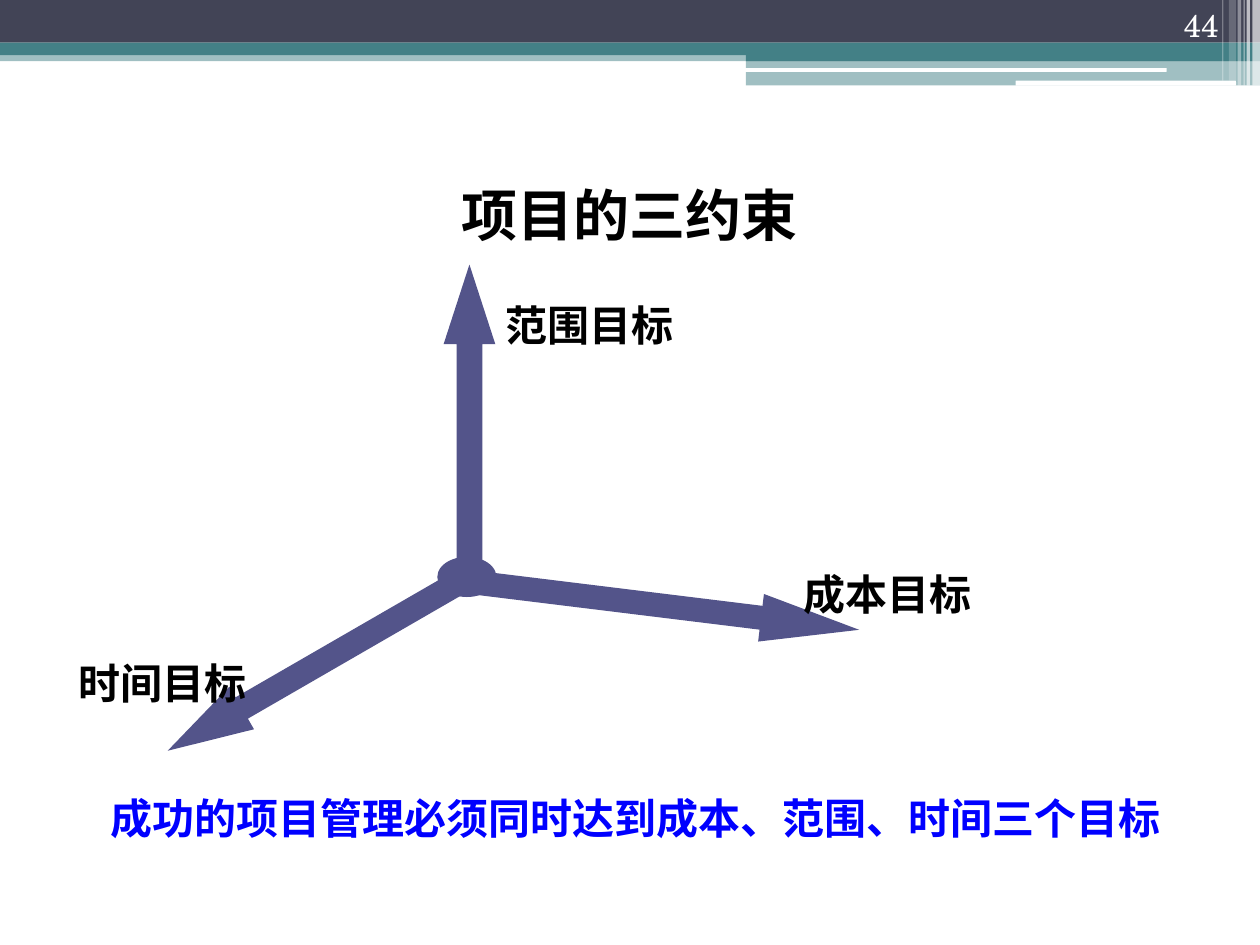
from lxml.etree import SubElement
from pptx import Presentation
from pptx.dml.color import RGBColor
from pptx.enum.shapes import MSO_SHAPE as Preset
from pptx.enum.text import MSO_ANCHOR as Anchor, PP_ALIGN as Align
from pptx.oxml.ns import qn
from pptx.util import Pt

NAVY = RGBColor(0x42, 0x44, 0x56)
TEAL = RGBColor(0x43, 0x80, 0x86)
INDIGO = RGBColor(0x53, 0x54, 0x8A)
WHITE = RGBColor(0xFF, 0xFF, 0xFF)
BLACK = RGBColor(0, 0, 0)
BLUE = RGBColor(0, 0, 0xFF)


def add_solid(shapes, preset, box, color, opacity=100, rotation=0, adjustments=()):
    """Add a borderless filled shape; box is left, top, width, height in points."""
    shape = shapes.add_shape(preset, *map(Pt, box))
    shape.shadow.inherit = False
    shape.line.fill.background()
    shape.fill.solid()
    shape.fill.fore_color.rgb = color
    shape.rotation = rotation
    for index, value in enumerate(adjustments):
        shape.adjustments[index] = value
    if opacity < 100:
        color_element = shape.fill._xPr.find(qn("a:solidFill"))[0]
        SubElement(color_element, qn("a:alpha"), val=str(opacity * 1000))
    return shape


def add_text(shapes, text, box, size=24, font="Arial", color=BLACK, bold=True,
             align=Align.CENTER, anchor=Anchor.TOP, wrap=False, left_inset=7.2):
    text_box = shapes.add_textbox(*map(Pt, box))
    frame = text_box.text_frame
    frame.word_wrap = wrap
    frame.vertical_anchor = anchor
    frame.margin_left = Pt(left_inset)
    paragraph = frame.paragraphs[0]
    paragraph.alignment = align
    run = paragraph.add_run()
    run.text = text
    run.font.size = Pt(size)
    run.font.name = font
    run.font.bold = bold
    run.font.color.rgb = color


def add_header(shapes, box, page_number):
    left, top, width, height = box
    step_left = left + 426.2
    step_width = left + width - step_left

    # Horizontal bands
    bands = [
        (left, 28.8, width, 6.2, TEAL, 50),
        (left, 0, width, 24.4, NAVY, 100),
        (left, 24.4, width, 7.2, TEAL, 100),
        (step_left, 28, step_width, 7, TEAL, 100),
        (step_left, 34.9, step_width, 14, TEAL, 50),
    ]
    for band_left, offset, band_width, band_height, color, opacity in bands:
        add_solid(shapes, Preset.RECTANGLE,
                  (band_left, top + offset, band_width, band_height), color, opacity)

    # White rules
    for offset_x, offset_y, rule_width, rule_height in [
        (425.5, 38.9, 241.2, 2.2), (580.3, 46.1, 126, 2.9),
    ]:
        add_solid(shapes, Preset.ROUNDED_RECTANGLE,
                  (left + offset_x, top + offset_y, rule_width, rule_height),
                  WHITE, adjustments=[0.17])

    # Vertical stripes at the right edge
    for offset, stripe_width, stripe_height, opacity in [
        (715.7, 4.3, height, 65), (712.3, 2, height, 65), (710.6, 0.7, height, 60),
        (707.2, 2, height, 40), (702.2, 4, 46.1, 20), (698.4, 0.7, 46.1, 30),
    ]:
        add_solid(shapes, Preset.RECTANGLE,
                  (left + offset, top, stripe_width, stripe_height), WHITE, opacity)

    # Page number
    add_text(shapes, page_number, (left + 643.7, top, 59.8, 28.8), size=18,
             font="TeX Gyre Schola", color=WHITE, bold=False,
             align=Align.RIGHT, anchor=Anchor.BOTTOM, wrap=True)


def add_constraint_axes(shapes, left, top):
    group = shapes.add_group_shape().shapes

    # Arrows for cost, scope and time
    for preset, x, y, width, height, rotation, head in [
        (Preset.RIGHT_ARROW, 236.9, 181.4, 223.2, 27.4, 7, 2.06),
        (Preset.UP_ARROW, 221.8, 0, 29.5, 182.9, 0, 1.54),
        (Preset.UP_ARROW, 133.9, 132.5, 28.1, 193.7, 240, 1.74),
    ]:
        add_solid(group, preset, (left + x, top + y, width, height), INDIGO,
                  rotation=rotation, adjustments=[0.5, head])

    # Axis labels
    for text, x, y, left_inset in [
        ("成本目标", 414, 169.9, 13.2),
        ("时间目标", 0, 221, 13.2),
        ("范围目标", 249.8, 16.6, 7.2),
    ]:
        add_text(group, text, (left + x, top + y, 123.8, 36), font="Times New Roman",
                 align=Align.LEFT, wrap=True, left_inset=left_inset)

    # Hub where the axes meet
    add_solid(group, Preset.OVAL, (left + 218.2, top + 167, 33.8, 23), INDIGO)


def main():
    presentation = Presentation()
    presentation.slide_width = Pt(720)
    presentation.slide_height = Pt(540)
    slide = presentation.slides.add_slide(presentation.slide_layouts[6])
    shapes = slide.shapes

    add_header(shapes, (0, 0, 720, 49), "44")
    add_text(shapes, "项目的三约束", (256.3, 99.4, 207.4, 45.4), size=32)
    add_constraint_axes(shapes, 31.7, 151.2)
    add_text(shapes, "成功的项目管理必须同时达到成本、范围、时间三个目标",
             (54, 449.3, 617.8, 36), color=BLUE)

    presentation.save("out.pptx")


if __name__ == "__main__":
    main()
